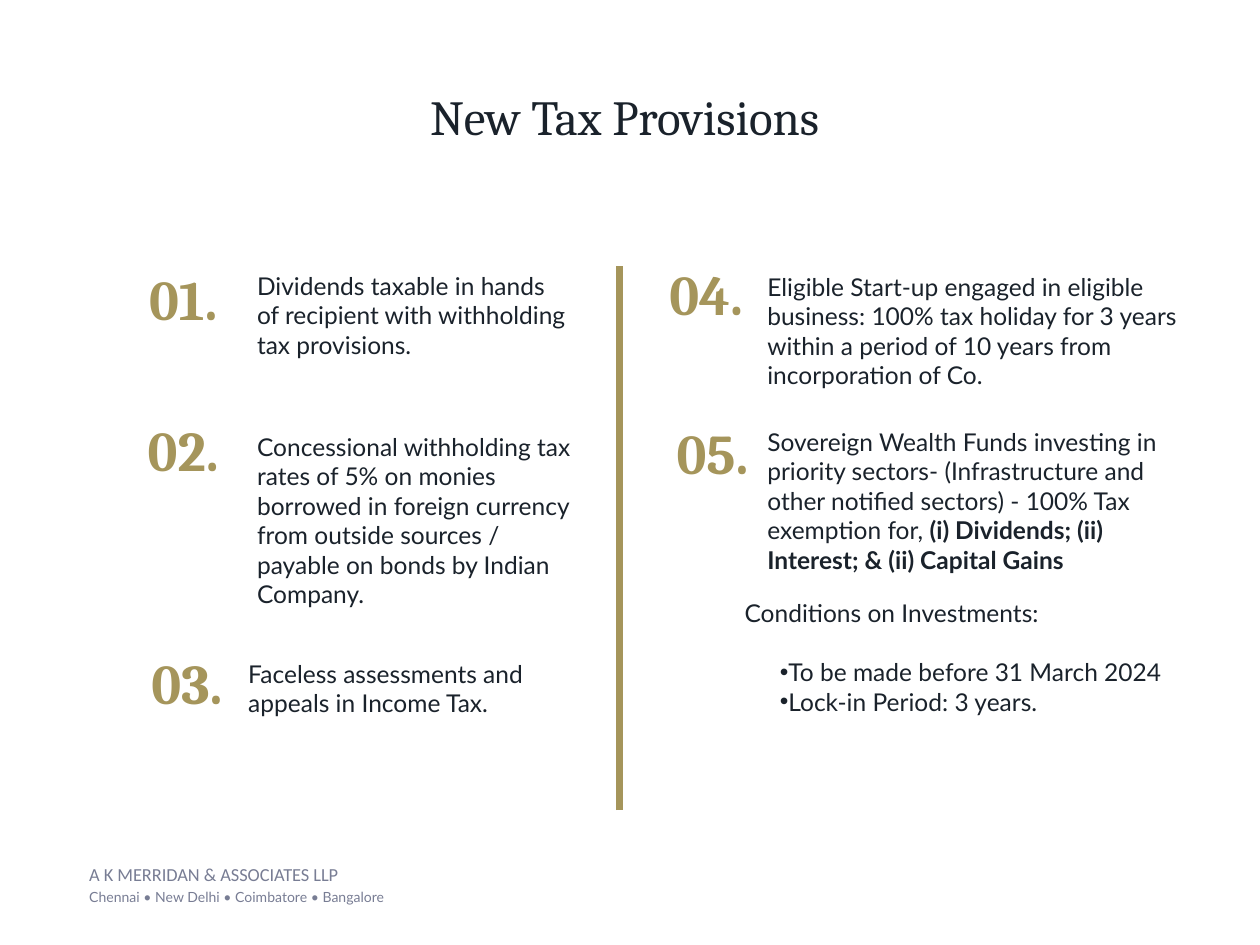
import lxml.etree
import pptx
import pptx.dml.color
import pptx.enum.shapes
import pptx.enum.text
import pptx.oxml.ns
import pptx.util

Inches, Pt = pptx.util.Inches, pptx.util.Pt
CENTER = pptx.enum.text.PP_ALIGN.CENTER
TOP = pptx.enum.text.MSO_ANCHOR.TOP
INK, GOLD, GREY = "1A222B", "A5955B", "787D94"


def color(code):
    """Return the colour for a hex string."""
    return pptx.dml.color.RGBColor.from_string(code)


def style(font, face, size, code, bold=False):
    """Set the face, size, colour and weight of a font."""
    font.name, font.size, font.bold = face, Pt(size), bold
    font.color.rgb = color(code)


def set_frame(frame, pad=0.05):
    """Set wrapping, anchor and margins of a frame and return it."""
    frame.word_wrap, frame.vertical_anchor = True, TOP
    frame.margin_top = frame.margin_bottom = Inches(0.05)
    frame.margin_left = frame.margin_right = Inches(pad)
    return frame


def add_box(slide, box, pad=0.05):
    """Add a wrapping text box and return its frame."""
    return set_frame(slide.shapes.add_textbox(*map(Inches, box)).text_frame, pad)


def add_title(slide, box, text):
    """Place the centred title."""
    frame = add_box(slide, box)
    frame.text = text
    para = frame.paragraphs[0]
    para.alignment, para.line_spacing = CENTER, 0.8
    style(para.runs[0].font, "Cambria", 28, INK)


def add_number(slide, box, text):
    """Place a large gold item number in a clear outline."""
    left, top, width, height = map(Inches, box)
    right, base = left + width, top + height
    pen = slide.shapes.build_freeform(left, top)
    pen.add_line_segments([(right, top), (right, base), (left, base)])
    shape = pen.convert_to_shape()
    shape.shadow.inherit = False
    shape.fill.background()
    shape.line.fill.background()
    frame = set_frame(shape.text_frame)
    frame.text = text
    para = frame.paragraphs[0]
    para.alignment = CENTER
    style(para.runs[0].font, "Cambria", 32, GOLD, True)


def add_body(slide, box, text, strong=""):
    """Place an item text with an optional bold ending."""
    para = add_box(slide, box).paragraphs[0]
    for part, bold in ((text, False), (strong, True)):
        if part:
            run = para.add_run()
            run.text = part
            style(run.font, "Lato", 14, INK, bold)


def add_terms(slide, box, head, terms):
    """Place a heading with its bulleted conditions."""
    frame = add_box(slide, box)
    frame.text = "\n".join([head, *terms])
    for index, para in enumerate(frame.paragraphs):
        if index:
            props = para._p.get_or_add_pPr()
            props.set("marL", str(Inches(0.28)))
            props.set("indent", "0")
            for tag, key, value in (("a:buFont", "typeface", "Arial"),
                                    ("a:buChar", "char", "•")):
                mark = lxml.etree.SubElement(props, pptx.oxml.ns.qn(tag))
                mark.set(key, value)
            para.line_spacing = Pt(16.8)
        if index == 1:
            para.space_before = Pt(16.8)
        style(para.runs[0].font, "Lato", 14, INK)


def add_rule(slide, left, top, height):
    """Draw the upright rule between the columns."""
    line = slide.shapes.add_connector(
        pptx.enum.shapes.MSO_CONNECTOR.STRAIGHT,
        Inches(left), Inches(top + height), Inches(left), Inches(top))
    line.line.color.rgb = color(GOLD)
    line.line.width = Pt(4)
    lxml.etree.SubElement(line._element.spPr, pptx.oxml.ns.qn("a:effectLst"))


def add_footer(slide, box, firm, towns):
    """Place the firm name above its towns."""
    frame = add_box(slide, box, 0.1)
    frame.text = f"{firm}\n{towns}"
    first, last = frame.paragraphs
    last.space_before = Pt(2.1)
    style(first.runs[0].font, "Calibri", 10.5, GREY)
    style(last.runs[0].font, "Lato", 8, GREY)


ITEMS = [
    ((1.02, 2.05), (1.99, 2.1, 2.6, 0.81),
     "Dividends taxable in hands of recipient with withholding tax provisions.", ""),
    ((1.02, 3.25), (1.99, 3.38, 2.68, 1.52),
     "Concessional withholding tax rates of 5% on monies borrowed in foreign "
     "currency from outside sources / payable on bonds by Indian Company.", ""),
    ((1.05, 5.1), (1.92, 5.18, 2.52, 0.81),
     "Faceless assessments and appeals in Income Tax.", ""),
    ((5.17, 2.01), (6.04, 2.11, 3.53, 1.05),
     "Eligible Start-up engaged in eligible business: 100% tax holiday for "
     "3 years within a period of 10 years from incorporation of Co.", ""),
    ((5.22, 3.27), (6.04, 3.34, 3.46, 1.76),
     "Sovereign Wealth Funds investing in priority sectors- (Infrastructure and "
     "other notified sectors) - 100% Tax exemption for, ",
     "(i) Dividends; (ii) Interest; & (ii) Capital Gains"),
]


def main():
    """Build and save the slide."""
    deck = pptx.Presentation()
    deck.slide_width, deck.slide_height = Inches(10), Inches(7.5)
    slide = deck.slides.add_slide(deck.slide_layouts[6])
    add_footer(slide, (0.61, 6.8, 4.77, 0.44), "A K MERRIDAN & ASSOCIATES LLP",
               "Chennai • New Delhi • Coimbatore • Bangalore")
    add_title(slide, (0.48, 0.73, 9.04, 0.5), "New Tax Provisions ")
    add_rule(slide, 4.92, 2.11, 4.32)
    for count, (spot, box, text, strong) in enumerate(ITEMS, 1):
        add_number(slide, (*spot, 0.87, 0.65), f"{count:02}.")
        add_body(slide, box, text, strong)
    add_terms(slide, (5.86, 4.7, 3.47, 1.29), "Conditions on Investments:",
              ["To be made before 31 March 2024", "Lock-in Period: 3 years."])
    deck.save("out.pptx")


if __name__ == "__main__":
    main()
